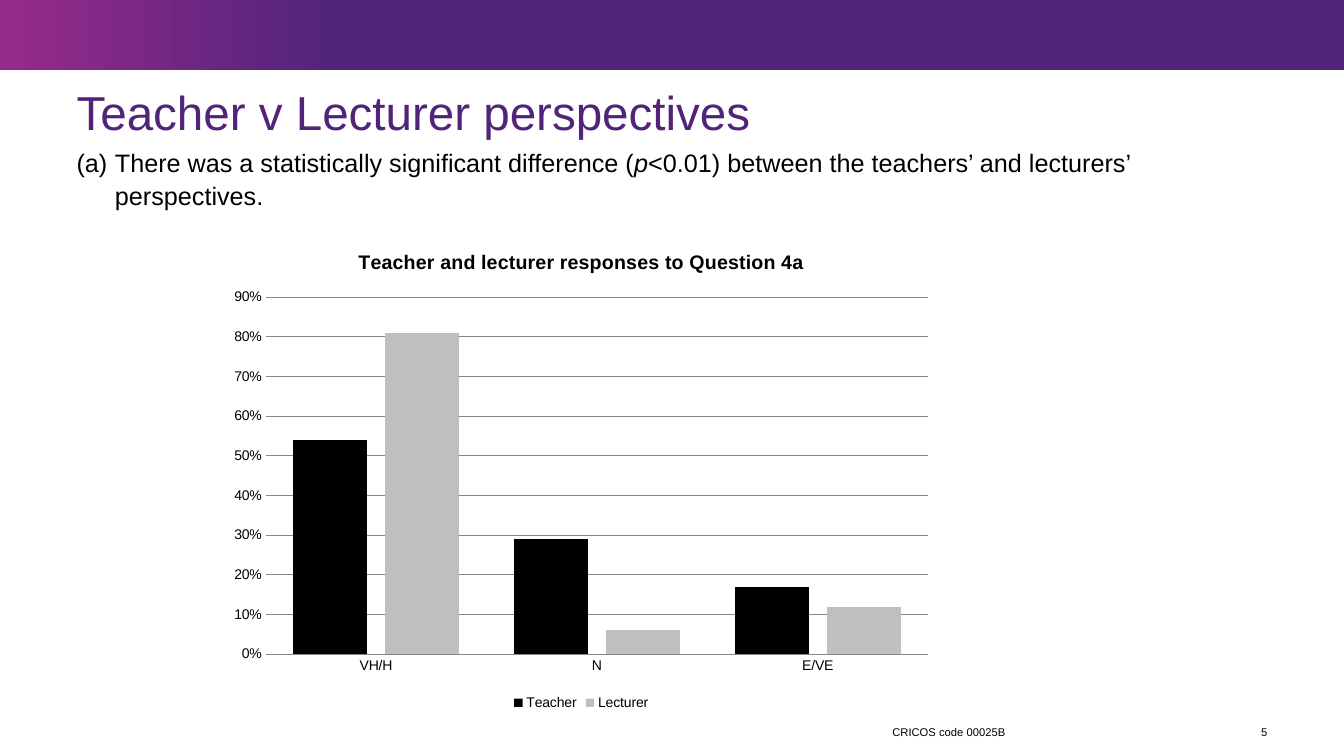
import dataclasses

import lxml.etree
import pptx
import pptx.chart.data
import pptx.dml.color
import pptx.enum.chart
import pptx.enum.shapes
import pptx.enum.text
import pptx.oxml.ns
import pptx.shapes.base
import pptx.slide
import pptx.text.text
import pptx.util

EMU_PER_PX = 9144
FONT = "Arial"
COLORS = {
    "purple": "51247A",
    "magenta": "962A8B",
    "black": "000000",
    "silver": "BFBFBF",
    "grid": "868686",
}


@dataclasses.dataclass(frozen=True)
class Box:
    left: int
    top: int
    width: int
    height: int

    def emu(self) -> tuple[int, int, int, int]:
        return px(self.left), px(self.top), px(self.width), px(self.height)


@dataclasses.dataclass(frozen=True)
class FooterText:
    text: str
    box: Box
    alignment: pptx.enum.text.PP_ALIGN


@dataclasses.dataclass(frozen=True)
class Responses:
    group: str
    shares: tuple[float, ...]
    color: str


FOOTERS = (
    FooterText("CRICOS code 00025B", Box(885, 713, 262, 26), pptx.enum.text.PP_ALIGN.LEFT),
    FooterText("5", Box(1226, 713, 31, 26), pptx.enum.text.PP_ALIGN.RIGHT),
)
CATEGORIES = ("VH/H", "N", "E/VE")
RESPONSES = (
    Responses("Teacher", (0.54, 0.29, 0.17), "black"),
    Responses("Lecturer", (0.81, 0.06, 0.12), "silver"),
)
FINDING = (
    ("There was a statistically significant difference (", False),
    ("p", True),
    ("<0.01) between the teachers’ and lecturers’ perspectives.", False),
)


def px(length: int) -> int:
    return pptx.util.Emu(length * EMU_PER_PX)


def rgb(name: str) -> pptx.dml.color.RGBColor:
    return pptx.dml.color.RGBColor.from_string(COLORS[name])


def style_font(font: pptx.text.text.Font, size: int, color: str = "black", bold: bool = False) -> None:
    font.name = FONT
    font.size = pptx.util.Pt(size)
    font.bold = bold
    font.color.rgb = rgb(color)


def place(shape: pptx.shapes.base.BaseShape, box: Box) -> None:
    shape.left, shape.top, shape.width, shape.height = box.emu()


def prepare_frame(
    text_frame: pptx.text.text.TextFrame, anchor: pptx.enum.text.MSO_ANCHOR
) -> None:
    text_frame.margin_left = text_frame.margin_right = 0
    text_frame.margin_top = text_frame.margin_bottom = 0
    text_frame.word_wrap = True
    text_frame.auto_size = pptx.enum.text.MSO_AUTO_SIZE.NONE
    text_frame.vertical_anchor = anchor


def add_banner(slide: pptx.slide.Slide) -> None:
    banner = slide.shapes.add_shape(
        pptx.enum.shapes.MSO_SHAPE.RECTANGLE, *Box(0, 0, 1333, 69).emu()
    )
    banner.shadow.inherit = False
    banner.line.fill.background()
    banner.fill.gradient()
    banner.fill.gradient_angle = 0
    for stop, position, color in zip(
        banner.fill.gradient_stops, (0, 0.25), ("magenta", "purple")
    ):
        stop.position = position
        stop.color.rgb = rgb(color)


def fill_title(slide: pptx.slide.Slide) -> None:
    title = slide.shapes.title
    place(title, Box(76, 89, 1181, 51))
    prepare_frame(title.text_frame, pptx.enum.text.MSO_ANCHOR.MIDDLE)
    title.text_frame.text = "Teacher v Lecturer perspectives"
    paragraph = title.text_frame.paragraphs[0]
    paragraph.alignment = pptx.enum.text.PP_ALIGN.LEFT
    paragraph.line_spacing = 0.9
    style_font(paragraph.runs[0].font, 34, "purple")


def add_lettering(paragraph: pptx.text.text._Paragraph) -> None:
    qn = pptx.oxml.ns.qn
    properties = paragraph._p.get_or_add_pPr()
    properties.set("marL", str(px(38)))
    properties.set("indent", str(-px(38)))
    bullet_color = lxml.etree.SubElement(properties, qn("a:buClr"))
    lxml.etree.SubElement(bullet_color, qn("a:srgbClr"), val=COLORS["black"])
    lxml.etree.SubElement(properties, qn("a:buFont"), typeface=FONT)
    lxml.etree.SubElement(properties, qn("a:buAutoNum"), type="alphaLcParenBoth")


def fill_body(slide: pptx.slide.Slide) -> None:
    body = slide.placeholders[1]
    place(body, Box(76, 143, 1181, 504))
    prepare_frame(body.text_frame, pptx.enum.text.MSO_ANCHOR.TOP)
    paragraph = body.text_frame.paragraphs[0]
    add_lettering(paragraph)
    paragraph.line_spacing = 1.1
    paragraph.space_before = pptx.util.Pt(0)
    paragraph.space_after = pptx.util.Pt(3)
    for text, italic in FINDING:
        run = paragraph.add_run()
        run.text = text
        style_font(run.font, 18)
        run.font.italic = italic


def add_footer(slide: pptx.slide.Slide, footer: FooterText) -> None:
    text_frame = slide.shapes.add_textbox(*footer.box.emu()).text_frame
    prepare_frame(text_frame, pptx.enum.text.MSO_ANCHOR.MIDDLE)
    text_frame.text = footer.text
    paragraph = text_frame.paragraphs[0]
    paragraph.alignment = footer.alignment
    style_font(paragraph.runs[0].font, 8)


def add_response_chart(slide: pptx.slide.Slide) -> None:
    data = pptx.chart.data.CategoryChartData(number_format="0%")
    data.categories = CATEGORIES
    for responses in RESPONSES:
        data.add_series(responses.group, responses.shares)
    chart = slide.shapes.add_chart(
        pptx.enum.chart.XL_CHART_TYPE.COLUMN_CLUSTERED, *Box(218, 229, 717, 480).emu(), data
    ).chart
    style_font(chart.font, 10)

    chart.has_title = True
    chart.chart_title.include_in_layout = False
    title_frame = chart.chart_title.text_frame
    title_frame.text = "Teacher and lecturer responses to Question 4a"
    style_font(title_frame.paragraphs[0].runs[0].font, 14, bold=True)

    chart.has_legend = True
    chart.legend.position = pptx.enum.chart.XL_LEGEND_POSITION.BOTTOM
    chart.legend.include_in_layout = False

    plot = chart.plots[0]
    plot.gap_width = 75
    plot.overlap = -25
    plot.vary_by_categories = False
    for series, responses in zip(plot.series, RESPONSES):
        series.format.fill.solid()
        series.format.fill.fore_color.rgb = rgb(responses.color)
        series.format.line.fill.background()

    for axis in (chart.category_axis, chart.value_axis):
        axis.major_tick_mark = pptx.enum.chart.XL_TICK_MARK.NONE
        axis.minor_tick_mark = pptx.enum.chart.XL_TICK_MARK.NONE
    chart.category_axis.format.line.color.rgb = rgb("grid")
    shares = chart.value_axis
    shares.minimum_scale, shares.maximum_scale, shares.major_unit = 0, 0.9, 0.1
    shares.tick_labels.number_format = "0%"
    shares.tick_labels.number_format_is_linked = False
    shares.format.line.fill.background()
    shares.has_major_gridlines = True
    shares.major_gridlines.format.line.color.rgb = rgb("grid")


def main() -> None:
    presentation = pptx.Presentation()
    presentation.slide_width, presentation.slide_height = px(1333), px(750)
    slide = presentation.slides.add_slide(presentation.slide_layouts[1])
    add_banner(slide)
    fill_title(slide)
    fill_body(slide)
    for footer in FOOTERS:
        add_footer(slide, footer)
    add_response_chart(slide)
    presentation.save("out.pptx")


if __name__ == "__main__":
    main()
